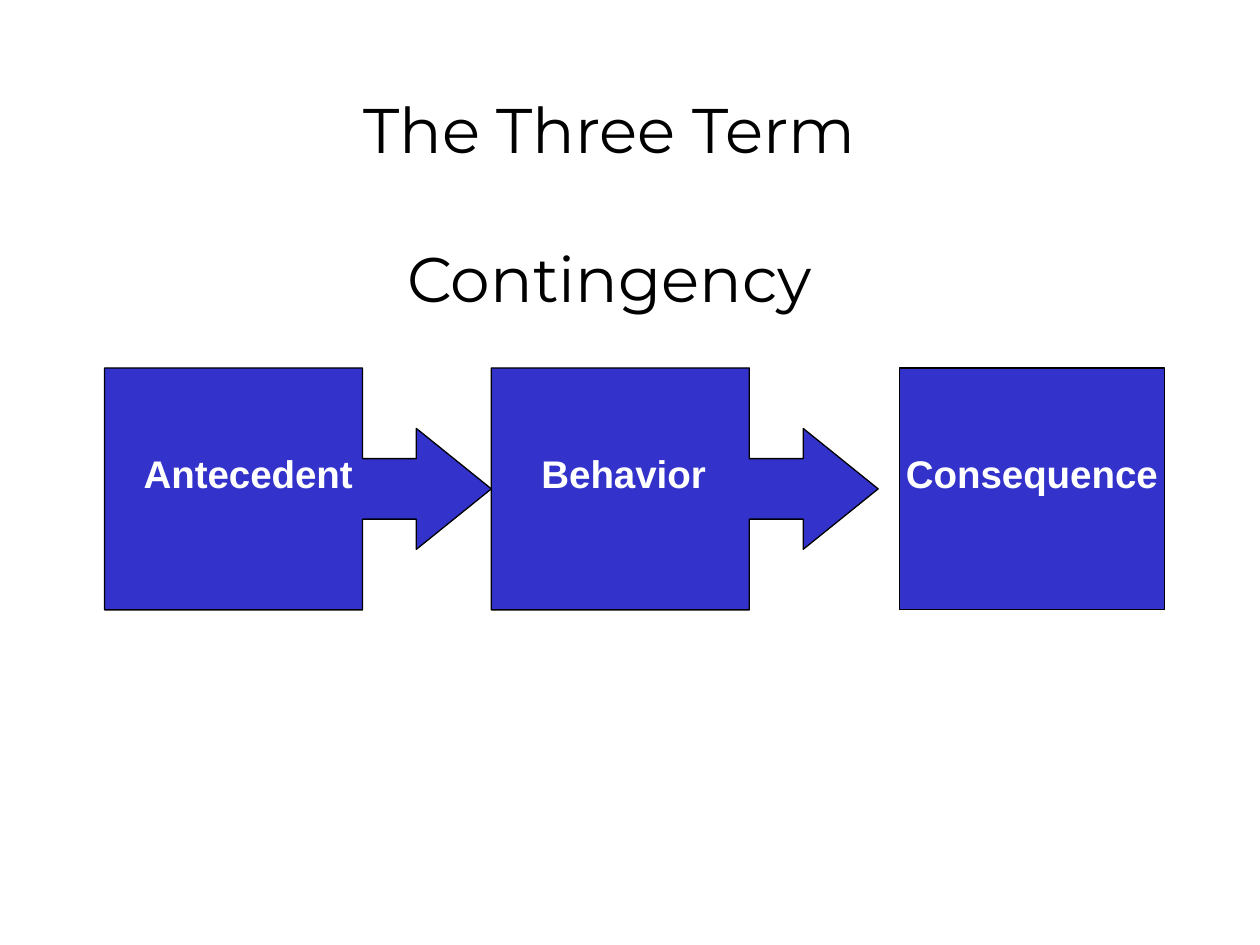
"""Build the slide on the three term contingency."""
from pptx import Presentation
from pptx import util as u
from pptx.dml.color import RGBColor
from pptx.enum import shapes, text

BLACK = RGBColor(0x00, 0x00, 0x00)
WHITE = RGBColor(0xFF, 0xFF, 0xFF)
BLUE = RGBColor(0x33, 0x33, 0xCC)


class ContingencySlide:
    """Hold the slide and its style on a grid of 100 columns by 75 rows."""

    def __init__(self, deck):
        self.slide = deck.slides.add_slide(deck.slide_layouts[6])
        self.column = deck.slide_width / 100
        self.row = deck.slide_height / 75

    def area(self, left, top, width, height):
        return (u.Emu(round(left * self.column)), u.Emu(round(top * self.row)),
                u.Emu(round(width * self.column)), u.Emu(round(height * self.row)))

    def words(self, lines, area, font, size, color, bold=False, gap=0):
        frame = self.slide.shapes.add_textbox(*self.area(*area)).text_frame
        frame.word_wrap = True
        for number, line in enumerate(lines):
            paragraph = frame.add_paragraph() if number else frame.paragraphs[0]
            paragraph.text = line
            paragraph.alignment = text.PP_ALIGN.CENTER
            if number:
                paragraph.space_before = u.Pt(gap)
            paragraph.font.name = font
            paragraph.font.size = u.Pt(size)
            paragraph.font.bold = bold
            paragraph.font.color.rgb = color

    def block(self, preset, area, adjustments=()):
        block = self.slide.shapes.add_shape(preset, *self.area(*area))
        block.shadow.inherit = False
        block.fill.solid()
        block.fill.fore_color.rgb = BLUE
        block.line.color.rgb = BLACK
        block.line.width = u.Pt(0.75)
        for number, value in enumerate(adjustments):
            block.adjustments[number] = value


def main():
    deck = Presentation()
    deck.slide_width, deck.slide_height = u.Inches(10), u.Inches(7.5)
    page = ContingencySlide(deck)

    page.words(["The Three Term", "Contingency"], (12.5, 6.7, 71.7, 63.3),
               "Montserrat", 36, BLACK, gap=42)

    top, height, step, first = 29.2, 19.2, 30.7, 8.3
    for stage in range(2):
        page.block(shapes.MSO_SHAPE.RIGHT_ARROW_CALLOUT,
                   (first + stage * step, top, step, height),
                   (0.25, 0.25, 0.31, 0.667))
    page.block(shapes.MSO_SHAPE.RECTANGLE, (71.4, top, 21, height))

    for term, left in (("Antecedent", first), ("Behavior", 38.1), ("Consequence", 70.5)):
        page.words([term], (left, 35.2, 22.8, 4.7), "Arial", 22, WHITE, bold=True)

    deck.save("out.pptx")


if __name__ == "__main__":
    main()
